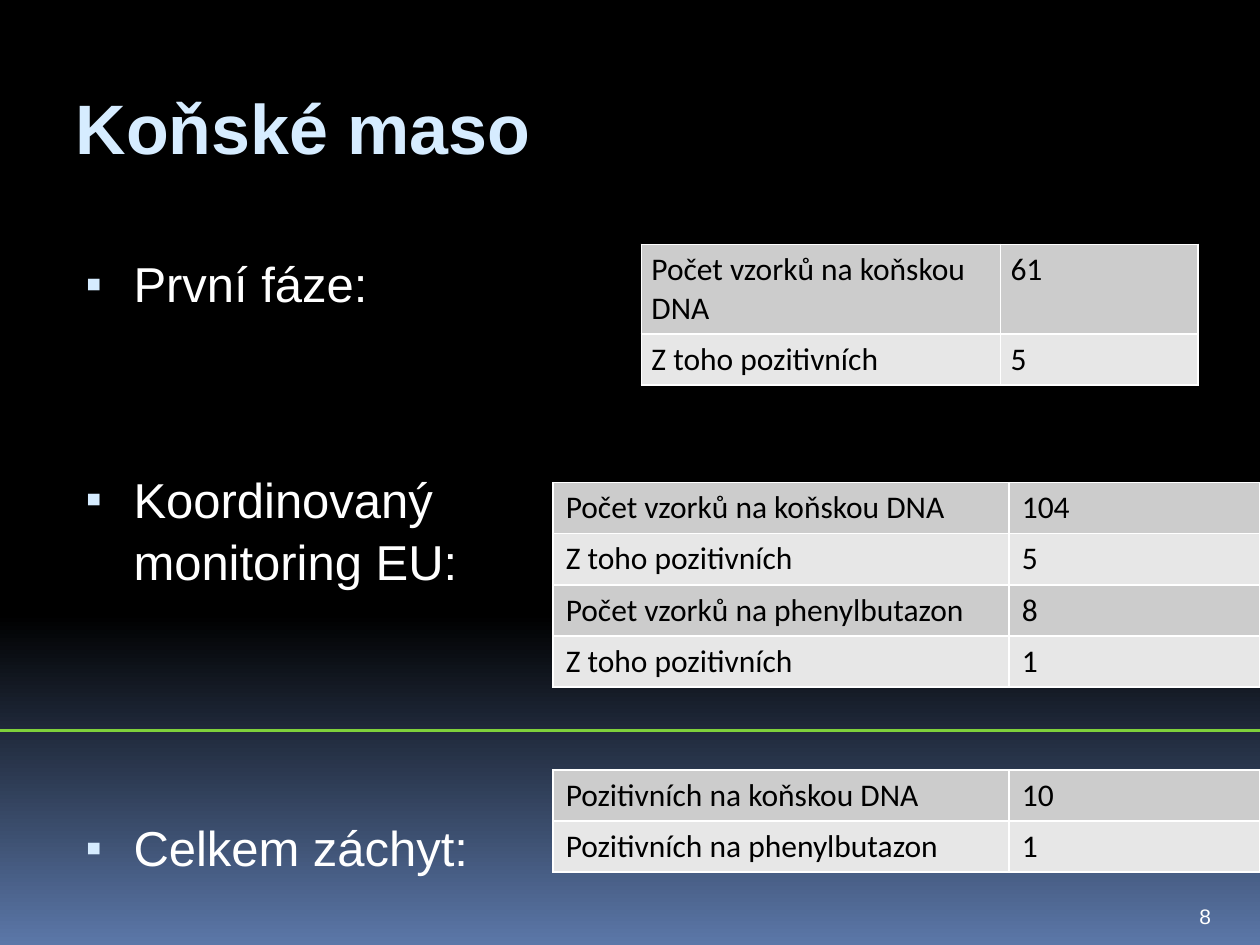
from lxml.etree import SubElement
from pptx import Presentation
from pptx.dml.color import RGBColor
from pptx.enum.shapes import MSO_CONNECTOR
from pptx.enum.text import MSO_ANCHOR, MSO_AUTO_SIZE, PP_ALIGN
from pptx.oxml.ns import qn
from pptx.util import Inches, Pt

THEME = {
    "heading_font": "Arial", "table_font": "Calibri",
    "title_size": 40, "body_size": 28, "table_size": 18, "number_size": 12,
    "title": "D6ECFF", "text": "FFFFFF", "table_text": "000000",
    "bands": ("CCCCCC", "E7E7E7"), "border": "FFFFFF", "rule": "7FD13B",
    "bg_top": "000000", "bg_bottom": "5B77A8",
}

TITLE = "Koňské maso"
# Item text and the space before it in points
ITEMS = [
    ("První fáze:", 7),
    ("Koordinovaný monitoring EU:", 88),
    ("Celkem záchyt:", 128.5),
]
WIDE_COLS = (3.62, 1.99)
TABLES = [
    {"at": (5.09, 1.94), "cols": (2.85, 1.57), "inset": 0.08, "rows": [
        ("Počet vzorků na koňskou DNA", "61"),
        ("Z toho pozitivních", "5"),
    ]},
    {"at": (4.39, 3.83), "cols": WIDE_COLS, "inset": 0.1, "rows": [
        ("Počet vzorků na koňskou DNA", "104"),
        ("Z toho pozitivních", "5"),
        ("Počet vzorků na phenylbutazon", "8"),
        ("Z toho pozitivních", "1"),
    ]},
    {"at": (4.39, 6.11), "cols": WIDE_COLS, "inset": 0.1, "rows": [
        ("Pozitivních na koňskou DNA", "10"),
        ("Pozitivních na phenylbutazon", "1"),
    ]},
]
ROW_HEIGHT = 0.405
RULE_Y = 5.8
SLIDE_NUMBER = "8"


def rgb(name):
    return RGBColor.from_string(THEME[name])


def add_run(p, text, size, color, font="heading_font", bold=False):
    r = p.add_run()
    r.text = text
    r.font.name = THEME[font]
    r.font.size = Pt(THEME[size])
    r.font.color.rgb = rgb(color)
    r.font.bold = bold


def place(sp, *box):
    sp.left, sp.top, sp.width, sp.height = map(Inches, box)


def add_bullet(p):
    pPr = p._p.get_or_add_pPr()
    pPr.set("marL", str(Inches(0.45)))
    pPr.set("indent", str(Inches(-0.38)))
    color = SubElement(pPr, qn("a:buClr"))
    SubElement(color, qn("a:srgbClr"), val=THEME["title"])
    SubElement(pPr, qn("a:buSzPct"), val="95000")
    SubElement(pPr, qn("a:buFont"), typeface=THEME["heading_font"])
    SubElement(pPr, qn("a:buChar"), char="▪")


def add_borders(cell):
    tcPr = cell._tc.get_or_add_tcPr()
    for side in ("lnL", "lnR", "lnT", "lnB"):
        ln = SubElement(tcPr, qn("a:" + side), w=str(Pt(1)))
        fill = SubElement(ln, qn("a:solidFill"))
        SubElement(fill, qn("a:srgbClr"), val=THEME["border"])


def add_table(s, at, cols, inset, rows):
    box = (*at, sum(cols), ROW_HEIGHT * len(rows))
    table = s.shapes.add_table(len(rows), len(cols), *map(Inches, box)).table
    table.first_row = table.horz_banding = False
    for column, width in zip(table.columns, cols):
        column.width = Inches(width)
    for i, row in enumerate(rows):
        for j, text in enumerate(row):
            cell = table.cell(i, j)
            cell.margin_left = cell.margin_right = Inches(inset)
            add_borders(cell)
            cell.fill.solid()
            cell.fill.fore_color.rgb = RGBColor.from_string(THEME["bands"][i % 2])
            add_run(cell.text_frame.paragraphs[0], text, "table_size",
                    "table_text", "table_font")


def set_background(s):
    fill = s.background.fill
    fill.gradient()
    fill.gradient_angle = 270
    stops = ((0.65, "bg_top"), (1, "bg_bottom"))
    for stop, (position, color) in zip(fill.gradient_stops, stops):
        stop.position = position
        stop.color.rgb = rgb(color)


def main():
    prs = Presentation()
    prs.slide_width, prs.slide_height = Inches(10), Inches(7.5)
    s = prs.slides.add_slide(prs.slide_layouts[1])
    set_background(s)

    title = s.shapes.title
    place(title, 0.5, 0.56, 9, 1)
    tf = title.text_frame
    tf.vertical_anchor = MSO_ANCHOR.TOP
    tf.margin_top = Inches(0.11)
    p = tf.paragraphs[0]
    p.alignment = PP_ALIGN.LEFT
    add_run(p, TITLE, "title_size", "title", bold=True)

    body = s.placeholders[1]
    place(body, 0.51, 1.94, 4.42, 4.95)
    tf = body.text_frame
    tf.auto_size = MSO_AUTO_SIZE.NONE
    for i, (text, space) in enumerate(ITEMS):
        p = tf.add_paragraph() if i else tf.paragraphs[0]
        p.space_before = Pt(space)
        p.line_spacing = 1.05
        add_bullet(p)
        add_run(p, text, "body_size", "text")

    for table in TABLES:
        add_table(s, **table)

    number = s.shapes.add_textbox(*map(Inches, (9.42, 7.02, 0.5, 0.4)))
    tf = number.text_frame
    tf.word_wrap = True
    tf.vertical_anchor = MSO_ANCHOR.BOTTOM
    add_run(tf.paragraphs[0], SLIDE_NUMBER, "number_size", "text")

    rule = s.shapes.add_connector(MSO_CONNECTOR.STRAIGHT, 0, Inches(RULE_Y),
                                  prs.slide_width, Inches(RULE_Y))
    rule.line.color.rgb = rgb("rule")
    rule.line.width = Pt(1.75)
    SubElement(rule._element.spPr, qn("a:effectLst"))

    prs.save("out.pptx")


if __name__ == "__main__":
    main()
